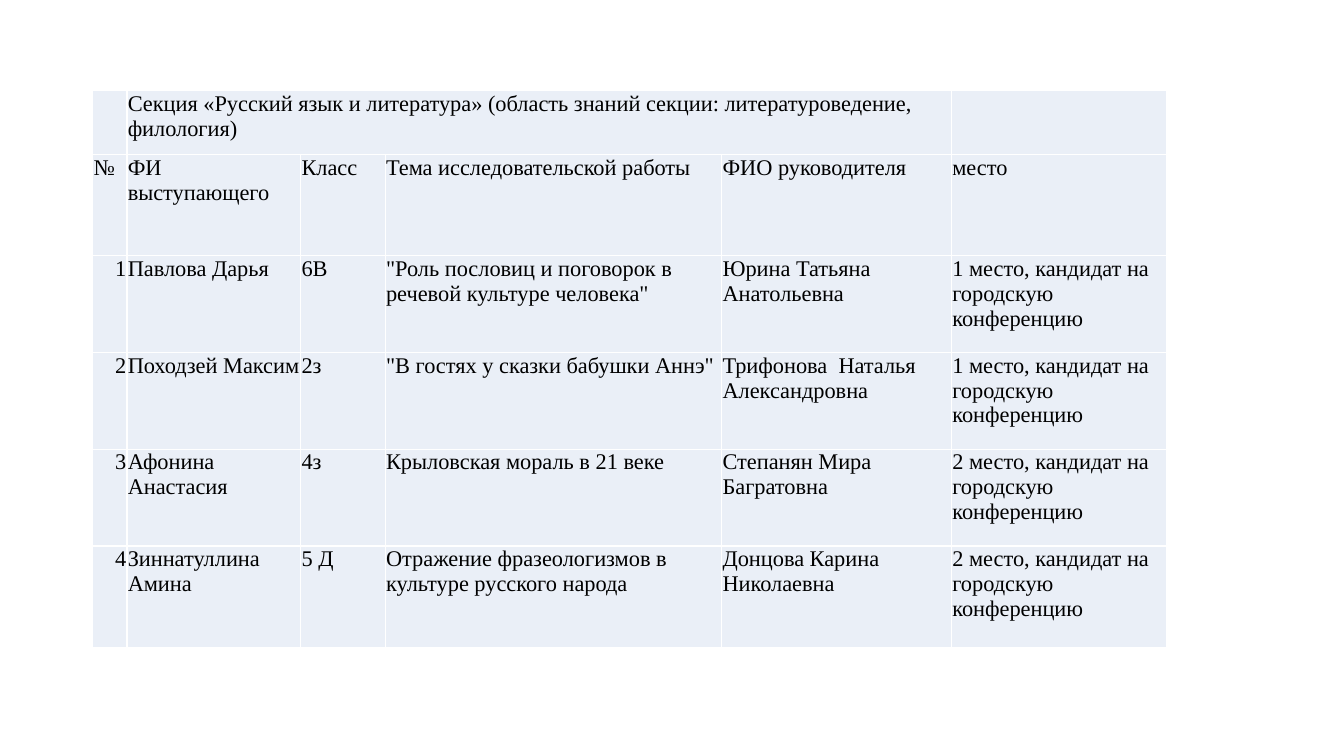
from lxml import etree
from pptx import Presentation
from pptx import util as u
from pptx.dml.color import RGBColor
from pptx.enum import text
from pptx.oxml import ns

COLUMNS = [0.86, 4.38, 2.13, 8.48, 5.79, 5.43]
ROWS = [1.6, 2.55, 2.44, 2.44, 2.44, 2.56]
SECTION = "Секция «Русский язык и литература» (область знаний секции: литературоведение, филология)"
HEADERS = ["№", "ФИ выступающего", "Класс", "Тема исследовательской работы",
           "ФИО руководителя", "место"]
AWARD = "{} место, кандидат на городскую конференцию"
SPEAKERS = [
    ("Павлова Дарья", "6В", '"Роль пословиц и поговорок в речевой культуре человека"',
     "Юрина Татьяна Анатольевна", 1),
    ("Походзей Максим", "2з", '"В гостях у сказки бабушки Аннэ"',
     "Трифонова  Наталья Александровна", 1),
    ("Афонина Анастасия", "4з", "Крыловская мораль в 21 веке",
     "Степанян Мира Багратовна", 2),
    ("Зиннатуллина Амина", "5 Д", "Отражение фразеологизмов в культуре русского народа",
     "Донцова Карина Николаевна", 2),
]


def color(value):
    return RGBColor.from_string(value)


class SlideBuilder:
    font = "Times New Roman"
    size = 16
    ink = "000000"
    cell_fill = "EAEFF7"
    border = "FFFFFF"

    def __init__(self, prs):
        self.s = prs.slides.add_slide(prs.slide_layouts[6])

    def table(self, left, top, widths, heights, rows):
        frame = self.s.shapes.add_table(
            len(heights), len(widths), u.Cm(left), u.Cm(top),
            u.Cm(sum(widths)), u.Cm(sum(heights)))
        table = frame.table
        for column, width in zip(table.columns, widths):
            column.width = u.Cm(width)
        for row, height, values in zip(table.rows, heights, rows):
            row.height = u.Cm(height)
            for cell, value in zip(row.cells, values):
                self.cell(cell, value)
        return table

    def cell(self, cell, value):
        """Style one cell; whole numbers are aligned to the right."""
        cell.margin_left = cell.margin_right = cell.margin_top = u.Cm(0.02)
        cell.margin_bottom = 0
        self.borders(cell)
        cell.fill.solid()
        cell.fill.fore_color.rgb = color(self.cell_fill)
        cell.text_frame.text = str(value)
        p = cell.text_frame.paragraphs[0]
        if isinstance(value, int):
            p.alignment = text.PP_ALIGN.RIGHT
        p.font.name = self.font
        p.font.size = u.Pt(self.size)
        for r in p.runs:
            r.font.name = self.font
            r.font.size = u.Pt(self.size)
            r.font.color.rgb = color(self.ink)

    def borders(self, cell):
        tc_pr = cell._tc.get_or_add_tcPr()
        for side in ("L", "R", "T", "B"):
            line = etree.SubElement(tc_pr, ns.qn(f"a:ln{side}"), w=str(u.Pt(1)))
            fill = etree.SubElement(line, ns.qn("a:solidFill"))
            etree.SubElement(fill, ns.qn("a:srgbClr"), val=self.border)


def main():
    prs = Presentation()
    prs.slide_width, prs.slide_height = u.Cm(33.87), u.Cm(19.05)
    rows = [["", SECTION, "", "", "", ""], HEADERS]
    for number, (*details, place) in enumerate(SPEAKERS, 1):
        rows.append([number, *details, AWARD.format(place)])
    table = SlideBuilder(prs).table(2.34, 2.29, COLUMNS, ROWS, rows)
    table.cell(0, 1).merge(table.cell(0, 4))
    prs.save("out.pptx")


if __name__ == "__main__":
    main()
